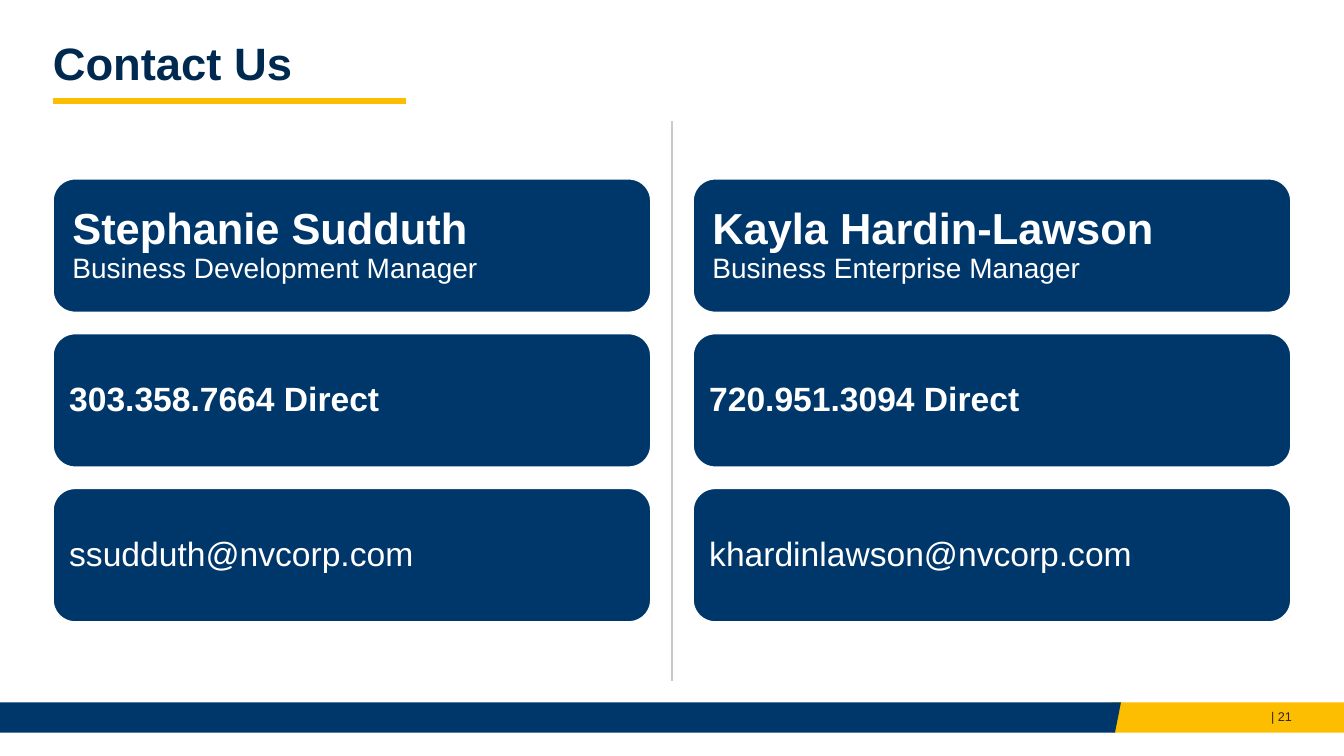
from lxml import etree
from pptx import Presentation
from pptx import util as u
from pptx.dml.color import RGBColor
from pptx.enum import shapes, text
from pptx.oxml.ns import qn

Cm, Pt = u.Cm, u.Pt
NAVY = RGBColor(0x00, 0x37, 0x6A)
TITLE_NAVY = RGBColor(0x00, 0x29, 0x50)
GOLD = RGBColor(0xFD, 0xBD, 0x00)
GREY = RGBColor(0xC7, 0xCA, 0xCB)
DARK = RGBColor(0x26, 0x26, 0x26)
WHITE = RGBColor(0xFF, 0xFF, 0xFF)

WIDTH, HEIGHT = 33.87, 19.05
MARGIN = 1.33
CARD_W, CARD_H, CARD_PITCH = 15.08, 3.38, 3.9

CONTACTS = [
    ("Stephanie Sudduth", "Business Development Manager",
     "303.358.7664 Direct", "ssudduth@nvcorp.com"),
    ("Kayla Hardin-Lawson", "Business Enterprise Manager",
     "720.951.3094 Direct", "khardinlawson@nvcorp.com"),
]


def add_text(p, words, size=24, color=WHITE, bold=False, align=text.PP_ALIGN.LEFT):
    p.alignment = align
    p.line_spacing = 0.9
    r = p.add_run()
    r.text = words
    r.font.name = "Arial"
    r.font.size = Pt(size)
    r.font.bold = bold
    r.font.color.rgb = color


def set_frame(tf, x_inset, y_inset):
    tf.word_wrap = True
    tf.vertical_anchor = text.MSO_ANCHOR.MIDDLE
    tf.margin_left = tf.margin_right = Cm(x_inset)
    tf.margin_top = tf.margin_bottom = Cm(y_inset)


def fill_plain(sp, color):
    sp.shadow.inherit = False
    sp.fill.solid()
    sp.fill.fore_color.rgb = color
    sp.line.fill.background()


def add_line(s, x1, y1, x2, y2, color, weight):
    line = s.shapes.add_connector(shapes.MSO_CONNECTOR.STRAIGHT,
                                  Cm(x1), Cm(y1), Cm(x2), Cm(y2))
    line.line.color.rgb = color
    line.line.width = Pt(weight)
    etree.SubElement(line._element.spPr, qn("a:effectLst"))


def add_footer(s, top, height, number):
    # Gold block on the right, under a navy band with a slanted end
    gold_w, band_w, slant = 5.86, 28.25, 0.15
    sp = s.shapes.add_shape(shapes.MSO_SHAPE.RECTANGLE, Cm(WIDTH - gold_w),
                            Cm(top), Cm(gold_w), Cm(height))
    fill_plain(sp, GOLD)
    band = s.shapes.build_freeform(0, Cm(top))
    band.add_line_segments([(Cm(band_w), Cm(top)),
                            (Cm(band_w - slant), Cm(top + height)),
                            (0, Cm(top + height))], close=True)
    fill_plain(band.convert_to_shape(), NAVY)

    # Page number
    box = s.shapes.add_textbox(Cm(26.95), Cm(top + 0.08), Cm(gold_w), Cm(0.61))
    set_frame(box.text_frame, 0.25, 0.13)
    add_text(box.text_frame.paragraphs[0], f"| {number}", size=9, color=DARK,
             align=text.PP_ALIGN.RIGHT)


def add_title(s, left, top, width, height, words):
    title = s.shapes.title
    title.left, title.top = Cm(left), Cm(top)
    title.width, title.height = Cm(width), Cm(height)
    tf = title.text_frame
    set_frame(tf, 0, 0.13)
    tf.auto_size = text.MSO_AUTO_SIZE.NONE
    add_text(tf.paragraphs[0], words, size=32.4, color=TITLE_NAVY, bold=True)
    # Gold underline
    add_line(s, left, 2.54, left + 8.89, 2.54, GOLD, 4)


def add_card(s, left, top, inset):
    sp = s.shapes.add_shape(shapes.MSO_SHAPE.ROUNDED_RECTANGLE, Cm(left), Cm(top),
                            Cm(CARD_W), Cm(CARD_H))
    fill_plain(sp, NAVY)
    sp.line.color.rgb = WHITE
    sp.line.width = Pt(1.5)
    set_frame(sp.text_frame, inset, inset)
    return sp.text_frame.paragraphs[0]


def add_contact(s, left, top, name, role, phone, email):
    p = add_card(s, left, top, 0.33)
    add_text(p, name, size=31, bold=True)
    p.add_line_break()
    add_text(p, role, size=20)
    add_text(add_card(s, left, top + CARD_PITCH, 0.25), phone, bold=True)
    add_text(add_card(s, left, top + 2 * CARD_PITCH, 0.25), email)


def main():
    prs = Presentation()
    prs.slide_width, prs.slide_height = Cm(WIDTH), Cm(HEIGHT)
    s = prs.slides.add_slide(prs.slide_layouts[5])

    add_footer(s, 17.7, 0.76, 21)
    add_title(s, MARGIN, 1.02, 28.83, 1.27, "Contact Us")

    # Divider between the two contacts
    add_line(s, WIDTH / 2, 3.05, WIDTH / 2, 17.15, GREY, 1)
    lefts = (MARGIN, WIDTH - MARGIN - CARD_W)
    for left, contact in zip(lefts, CONTACTS):
        add_contact(s, left, 4.5, *contact)

    prs.save("out.pptx")


if __name__ == "__main__":
    main()
